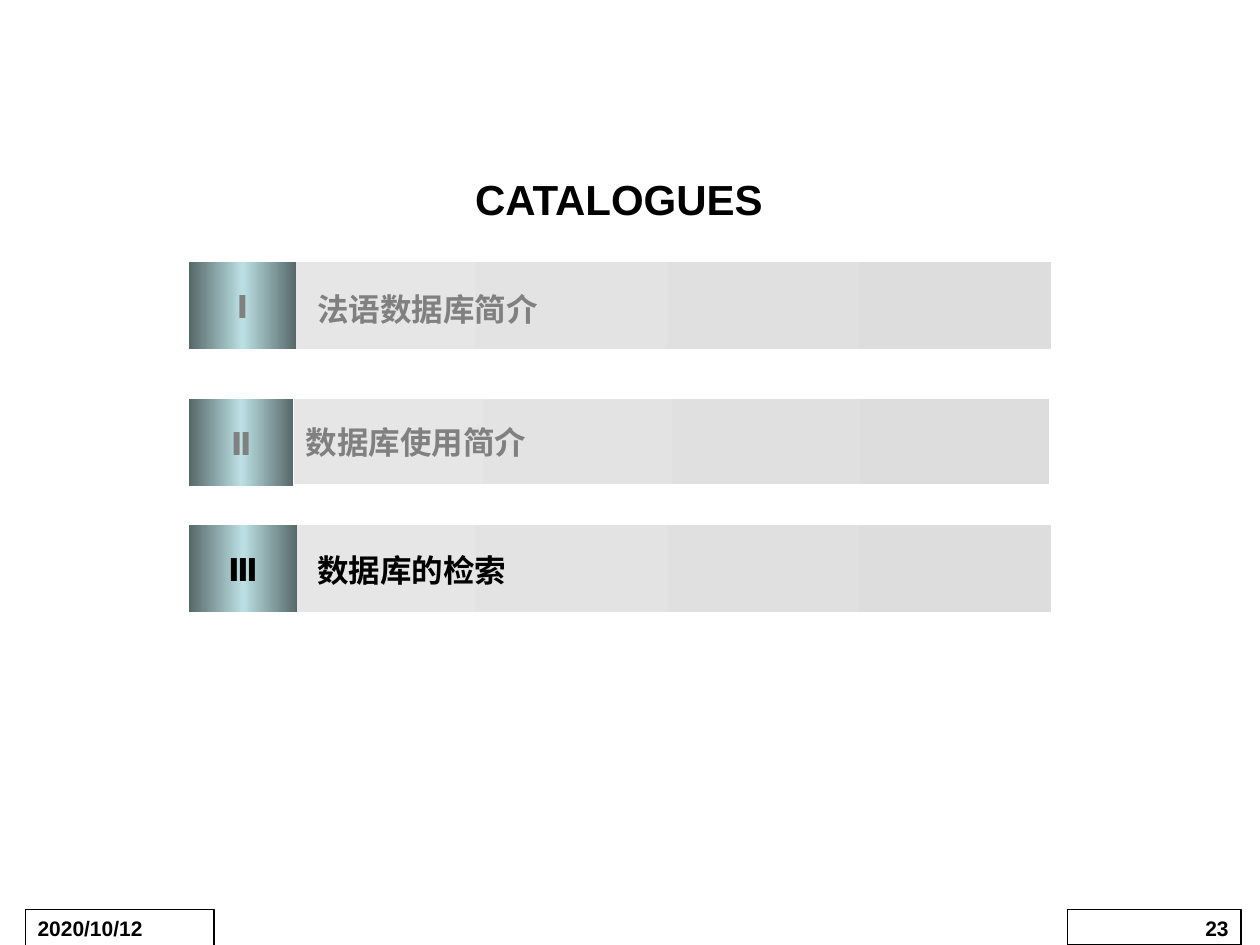
from dataclasses import dataclass

from lxml import etree
from pptx import Presentation
from pptx.dml.color import RGBColor
from pptx.enum import shapes, text
from pptx.oxml.ns import qn
from pptx.util import Inches, Pt


@dataclass(frozen=True)
class Theme:
    font: str = "Arial"
    black: str = "000000"
    muted: str = "808080"
    white: str = "FFFFFF"
    bar: tuple = ("E6E6E6", "DDDDDD")
    tab: tuple = ("576869", "BBE0E3", "576869")
    title_size: int = 24
    item_size: int = 18
    footer_size: int = 12


class CatalogueSlide:
    def __init__(self, prs, theme):
        self.theme = theme
        self.s = prs.slides.add_slide(prs.slide_layouts[5])

    def add_words(self, sp, words, size, color, align=text.PP_ALIGN.LEFT,
                  anchor=text.MSO_ANCHOR.MIDDLE, wrap=False):
        tf = sp.text_frame
        tf.word_wrap = wrap
        tf.vertical_anchor = anchor
        p = tf.paragraphs[0]
        p.alignment = align
        r = p.add_run()
        r.text = words
        r.font.name = self.theme.font
        r.font.size = Pt(size)
        r.font.bold = True
        r.font.color.rgb = RGBColor.from_string(color)

    def title(self, words, box):
        sp = self.s.shapes.title
        sp.left, sp.top, sp.width, sp.height = map(Inches, box)
        self.add_words(sp, words, self.theme.title_size, self.theme.black,
                       anchor=text.MSO_ANCHOR.TOP)
        sp.text_frame.auto_size = text.MSO_AUTO_SIZE.SHAPE_TO_FIT_TEXT

    def rectangle(self, box):
        sp = self.s.shapes.add_shape(shapes.MSO_SHAPE.RECTANGLE, *map(Inches, box))
        sp.shadow.inherit = False
        sp.line.fill.background()
        return sp

    def gradient(self, box, colors):
        sp = self.rectangle(box)
        sp.fill.gradient()
        sp.fill.gradient_angle = 0
        stops = sp._element.spPr.find(qn("a:gradFill")).find(qn("a:gsLst"))
        for stop in list(stops):
            stops.remove(stop)
        for i, color in enumerate(colors):
            stop = etree.SubElement(stops, qn("a:gs"), pos=str(100000 * i // (len(colors) - 1)))
            etree.SubElement(stop, qn("a:srgbClr"), val=color)
        return sp

    def label(self, words, box, color):
        sp = self.s.shapes.add_textbox(*map(Inches, box))
        self.add_words(sp, words, self.theme.item_size, color, wrap=True)
        sp.text_frame.auto_size = text.MSO_AUTO_SIZE.SHAPE_TO_FIT_TEXT

    def item(self, numeral, words, bar_box, tab_box, label_box, color):
        bar = self.gradient(bar_box, self.theme.bar)
        tab = self.gradient(tab_box, self.theme.tab)
        self.add_words(tab, numeral, self.theme.item_size, color, text.PP_ALIGN.CENTER)
        if label_box:
            self.label(words, label_box, color)
        else:
            self.add_words(bar, words, self.theme.item_size, color)

    def footer(self, words, box, align):
        sp = self.rectangle(box)
        sp.fill.solid()
        sp.fill.fore_color.rgb = RGBColor.from_string(self.theme.white)
        sp.line.color.rgb = RGBColor.from_string(self.theme.black)
        sp.line.width = Pt(0.75)
        self.add_words(sp, words, self.theme.footer_size, self.theme.black, align,
                       text.MSO_ANCHOR.TOP, wrap=True)


def main():
    prs = Presentation()
    prs.slide_width, prs.slide_height = Inches(10), Inches(7.5)
    theme = Theme()
    slide = CatalogueSlide(prs, theme)
    items = [
        ("Ⅰ", "法语数据库简介", (2.25, 2.08, 6.09, 0.69), (1.5, 2.08, 0.85, 0.69),
         (2.42, 2.25, 4.04, 0.4), theme.muted),
        ("Ⅱ", "数据库使用简介", (2.33, 3.17, 6, 0.67), (1.5, 3.17, 0.83, 0.69),
         None, theme.muted),
        ("Ⅲ", "数据库的检索", (2.25, 4.17, 6.09, 0.69), (1.5, 4.17, 0.86, 0.69),
         (2.42, 4.32, 5.7, 0.4), theme.black),
    ]
    slide.title("CATALOGUES", (3.67, 1.33, 2.51, 0.5))
    for item in items:
        slide.item(*item)
    slide.footer("2020/10/12", (0.2, 7.22, 1.5, 0.47), text.PP_ALIGN.LEFT)
    slide.footer("23", (8.47, 7.22, 1.38, 0.28), text.PP_ALIGN.RIGHT)
    prs.save("out.pptx")


if __name__ == "__main__":
    main()
